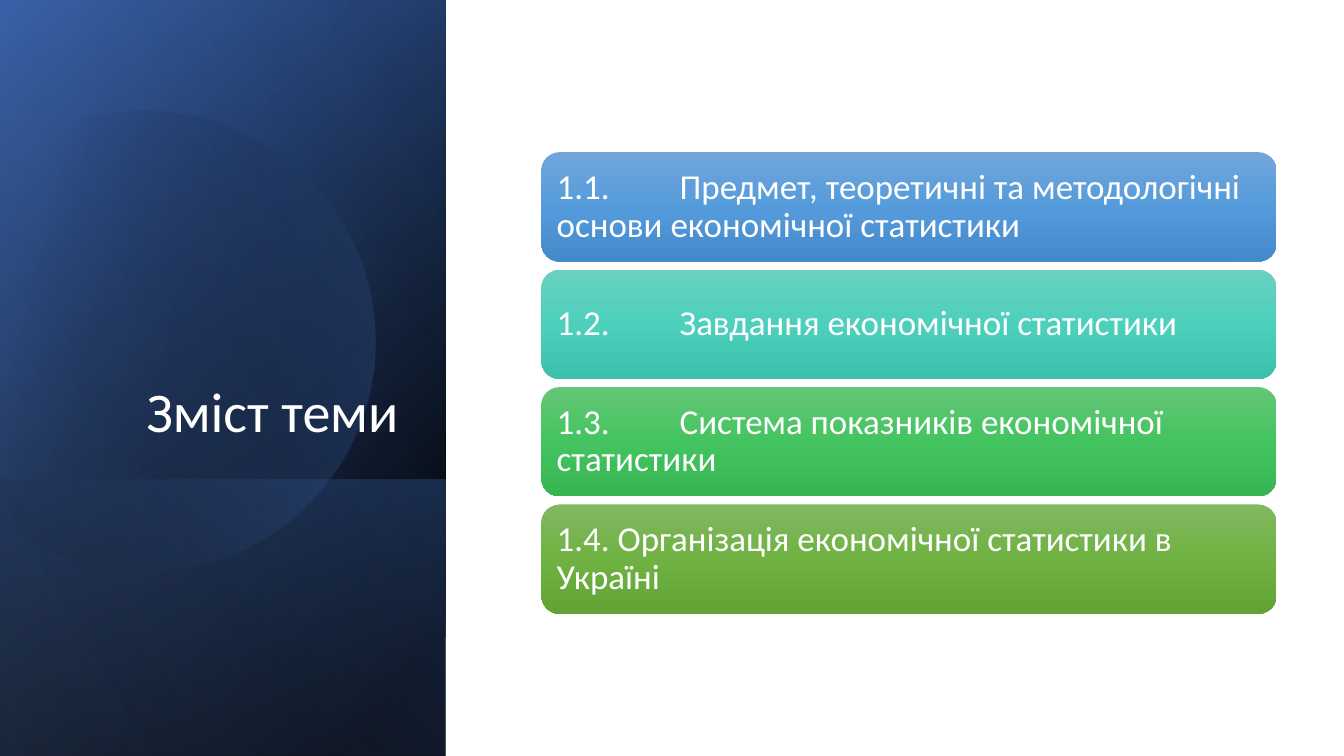
from math import cos, radians, sin

from lxml import etree
from pptx import Presentation
from pptx.dml.color import RGBColor
from pptx.enum.shapes import MSO_SHAPE
from pptx.enum.text import MSO_ANCHOR, PP_ALIGN
from pptx.oxml.ns import qn
from pptx.util import Inches, Pt

RECTANGLE = MSO_SHAPE.RECTANGLE
ROUNDED = MSO_SHAPE.ROUNDED_RECTANGLE
MIDDLE, BOTTOM = MSO_ANCHOR.MIDDLE, MSO_ANCHOR.BOTTOM
LEFT, RIGHT = PP_ALIGN.LEFT, PP_ALIGN.RIGHT

PANEL_WIDTH, SLIDE_WIDTH, SLIDE_HEIGHT = 4.42, 13.33, 7.5
SHADE_TOP = 4.76
TITLE = "Зміст теми"
TOPICS = [
    ("1.1.\tПредмет, теоретичні та методологічні основи економічної статистики",
     ("71A6DB", "559BDB", "448ACA")),
    ("1.2.\tЗавдання економічної статистики", ("6AD1C0", "4CD0BC", "3CC0AC")),
    ("1.3.\tСистема показників економічної статистики",
     ("64C677", "44C460", "36B552")),
    ("1.4. Організація економічної статистики в Україні",
     ("81B861", "6FB242", "62A336")),
]
DISC_TURN = 16.1
DISC_OUTLINE = [
    ("moveTo", [(1.49, 1.1)]),
    ("cubicBezTo", [(2.46, 1.12), (3.35, 1.77), (3.63, 2.75)]),
    ("cubicBezTo", [(3.98, 3.97), (3.28, 5.23), (2.07, 5.58)]),
    ("cubicBezTo", [(1.31, 5.8), (0.53, 5.61), (-0.03, 5.14)]),
    ("lnTo", [(-0.15, 5.03)]),
    ("lnTo", [(-0.15, 1.75)]),
    ("lnTo", [(0, 1.61)]),
    ("cubicBezTo", [(0.23, 1.42), (0.5, 1.28), (0.8, 1.19)]),
    ("cubicBezTo", [(1.03, 1.13), (1.26, 1.1), (1.49, 1.1)]),
    ("close", []),
]


def rgb(color):
    """Turn a hex string into a colour."""
    return RGBColor.from_string(color)


def apply_format(target, values):
    """Set each attribute of the target from a dict."""
    for name, value in values.items():
        setattr(target, name, value)


def paint(shape, stops, angle):
    """Fill a shape with a gradient of (position, colour, opacity) stops."""
    shape.shadow.inherit = False
    shape.line.fill.background()
    shape.fill.background()
    properties = shape._element.spPr
    gradient = etree.Element(qn("a:gradFill"), rotWithShape="1")
    stop_list = etree.SubElement(gradient, qn("a:gsLst"))
    for position, color, opacity in stops:
        stop = etree.SubElement(stop_list, qn("a:gs"), pos=str(position * 1000))
        tint = etree.SubElement(stop, qn("a:srgbClr"), val=str(rgb(color)))
        if opacity < 100:
            etree.SubElement(tint, qn("a:alpha"), val=str(opacity * 1000))
    etree.SubElement(gradient, qn("a:lin"), ang=str(angle * 60000), scaled="0")
    properties.replace(properties.find(qn("a:noFill")), gradient)


def write(shape, text, size, align, anchor):
    """Put one formatted white paragraph into a shape."""
    frame = shape.text_frame
    apply_format(frame, {"text": text, "word_wrap": True, "vertical_anchor": anchor})
    paragraph = frame.paragraphs[0]
    apply_format(paragraph, {"alignment": align, "line_spacing": 0.9})
    font = paragraph.runs[0].font
    apply_format(font, {"name": "Calibri", "size": Pt(size), "bold": False})
    font.color.rgb = rgb("FFFFFF")
    return paragraph


def add_layer(slide, box, stops, angle):
    """Cover a box with a mirrored gradient rectangle on its side."""
    left, top, width, height = box
    shift = (width - height) / 2
    layer = slide.shapes.add_shape(RECTANGLE, Inches(left + shift), Inches(top - shift),
                                   Inches(height), Inches(width))
    layer.rotation = 90
    layer._element.spPr.find(qn("a:xfrm")).set("flipH", "1")
    paint(layer, stops, angle)


def add_disc(slide, left, top, width, height):
    """Draw the tilted, clipped translucent disc in the box."""
    builder = slide.shapes.build_freeform(Inches(left), Inches(top))
    builder.add_line_segments([(Inches(left + width), Inches(top + height))])
    disc = builder.convert_to_shape()
    disc.rotation = 360 - DISC_TURN
    outline = disc._element.spPr.find(".//" + qn("a:path"))
    for part in list(outline):
        outline.remove(part)
    across, down = cos(radians(DISC_TURN)), sin(radians(DISC_TURN))
    for command, points in DISC_OUTLINE:
        part = etree.SubElement(outline, qn("a:" + command))
        for x, y in points:
            dx, dy = x - left - width / 2, y - top - height / 2
            etree.SubElement(part, qn("a:pt"),
                             x=str(Inches(width / 2 + dx * across - dy * down)),
                             y=str(Inches(height / 2 + dx * down + dy * across)))
    paint(disc, [(29, "000000", 0), (100, "4472C4", 43)], 30)


def add_title_panel(slide, left, top, width, height):
    """Build the dark panel with the title."""
    panel = (left, top, width, height)
    shade = (left, top + SHADE_TOP, width, height - SHADE_TOP)
    add_layer(slide, panel, [(8, "000000", 100), (100, "2F5597", 100)], 50)
    add_layer(slide, panel, [(0, "000000", 0), (99, "4472C4", 46)], 30)
    add_layer(slide, shade, [(2, "4472C4", 29), (100, "000000", 30)], 130)
    add_disc(slide, left - 0.55, top + 1.06, 4.27, 4.57)
    add_layer(slide, panel, [(0, "000000", 0), (99, "8FAADC", 11)], 120)
    title = slide.shapes.title
    apply_format(title, {"left": Inches(left + 0.64), "top": Inches(top + 1.84),
                         "width": Inches(3.41), "height": Inches(2.62)})
    write(title, TITLE, 40, RIGHT, BOTTOM)
    title._element.getparent().append(title._element)


def add_topics(slide, left, top, width, height):
    """Stack one gradient card per topic in the box."""
    gap = 0.08
    card_height = (height - gap * (len(TOPICS) - 1)) / len(TOPICS)
    for row, (topic, colors) in enumerate(TOPICS):
        card = slide.shapes.add_shape(
            ROUNDED, Inches(left), Inches(top + row * (card_height + gap)),
            Inches(width), Inches(card_height))
        paint(card, [(order * 50, color, 100)
                     for order, color in enumerate(colors)], 90)
        paragraph = write(card, topic, 25, LEFT, MIDDLE)
        if "\t" in topic:
            tabs = etree.SubElement(paragraph._p.get_or_add_pPr(), qn("a:tabLst"))
            etree.SubElement(tabs, qn("a:tab"), pos=str(Inches(1.22)), algn="l")


def main():
    """Build and save the contents slide."""
    deck = Presentation()
    apply_format(deck, {"slide_width": Inches(SLIDE_WIDTH),
                        "slide_height": Inches(SLIDE_HEIGHT)})
    slide = deck.slides.add_slide(deck.slide_layouts[5])
    add_title_panel(slide, 0, 0, PANEL_WIDTH, SLIDE_HEIGHT)
    add_topics(slide, 5.37, 1.51, 7.29, 4.58)
    deck.save("out.pptx")


if __name__ == "__main__":
    main()
